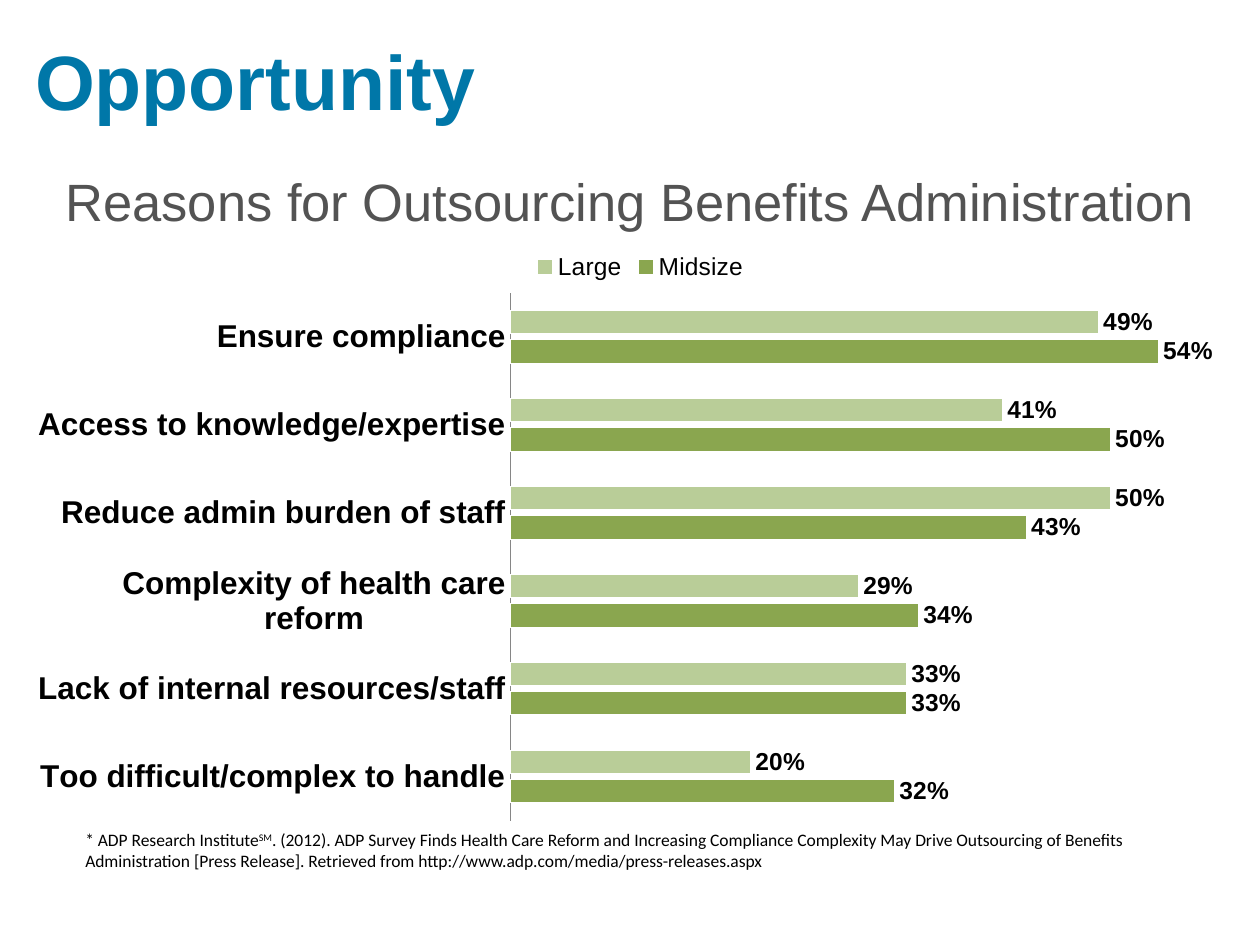
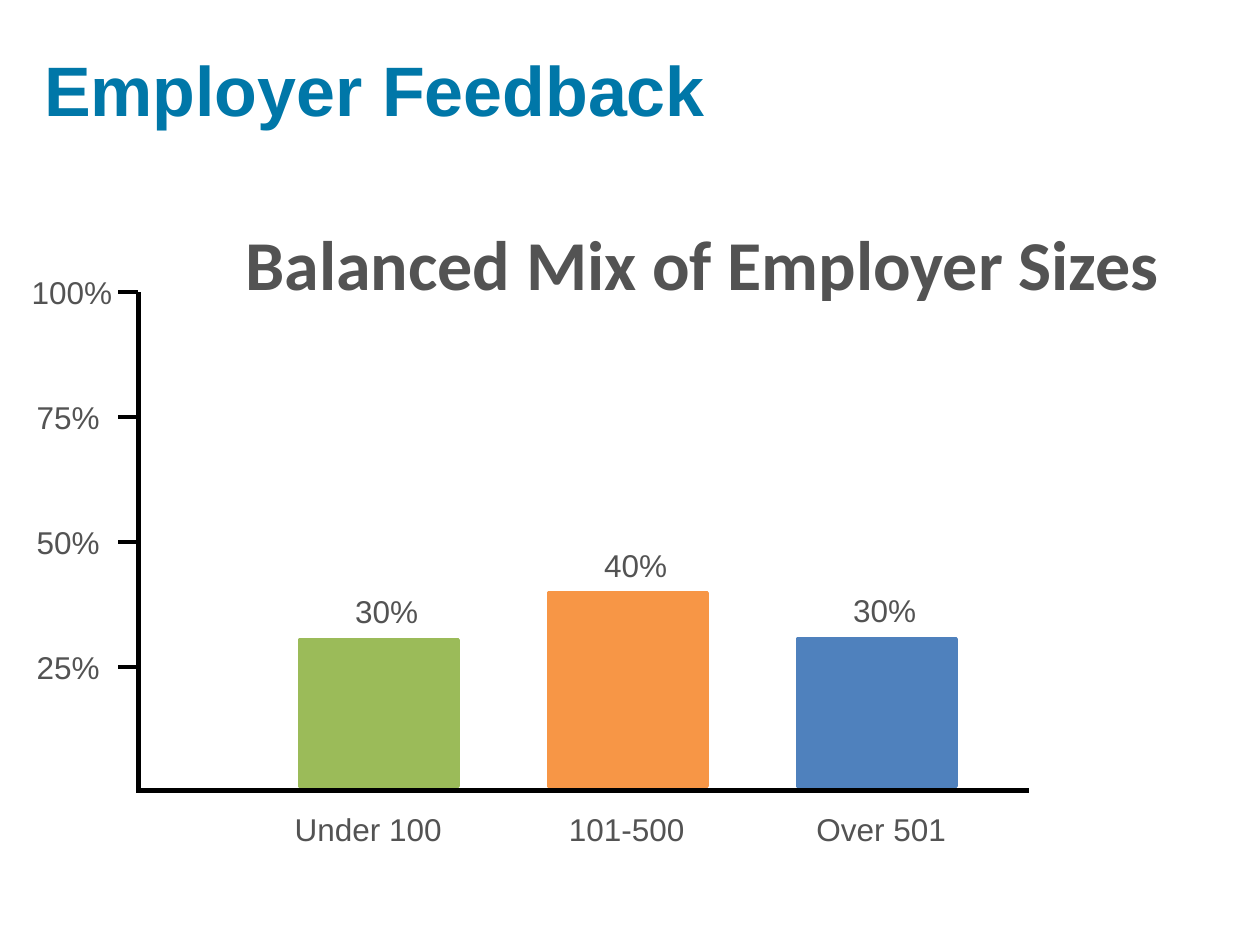
from lxml import etree
from pptx import Presentation
from pptx.chart.data import CategoryChartData
from pptx.dml.color import RGBColor
from pptx.enum.chart import (XL_CHART_TYPE, XL_LABEL_POSITION, XL_LEGEND_POSITION,
                             XL_TICK_LABEL_POSITION, XL_TICK_MARK)
from pptx.enum.shapes import MSO_CONNECTOR, MSO_SHAPE
from pptx.oxml.ns import qn
from pptx.util import Cm, Pt

BAR_CHART = XL_CHART_TYPE.BAR_CLUSTERED
OUTSIDE_END = XL_LABEL_POSITION.OUTSIDE_END
LEGEND_TOP = XL_LEGEND_POSITION.TOP
LABELS_NEXT_TO_AXIS = XL_TICK_LABEL_POSITION.NEXT_TO_AXIS
NO_TICK = XL_TICK_MARK.NONE
STRAIGHT = MSO_CONNECTOR.STRAIGHT
RECTANGLE = MSO_SHAPE.RECTANGLE

TITLE_BLUE = RGBColor(0x00, 0x77, 0xA8)
GREY = RGBColor(0x53, 0x53, 0x53)
AXIS_GREY = RGBColor(0x86, 0x86, 0x86)
BLACK = RGBColor(0x00, 0x00, 0x00)
WHITE = RGBColor(0xFF, 0xFF, 0xFF)
DARK_GREEN = RGBColor(0x8A, 0xA6, 0x4F)
PALE_GREEN = RGBColor(0xB9, 0xCD, 0x98)
GREEN = RGBColor(0x9B, 0xBB, 0x59)
ORANGE = RGBColor(0xF7, 0x96, 0x46)
BLUE = RGBColor(0x4F, 0x81, 0xBD)

REASONS = ["Too difficult/complex to handle", "Lack of internal resources/staff",
           "Complexity of health care reform", "Reduce admin burden of staff",
           "Access to knowledge/expertise", "Ensure compliance"]
REASON_SERIES = [
    ("Midsize", DARK_GREEN, [0.32, 0.33, 0.34, 0.43, 0.5, 0.54]),
    ("Large", PALE_GREEN, [0.2, 0.33, 0.29, 0.5, 0.41, 0.49]),
]
PLOT_LAYOUT = {"layoutTarget": "inner", "xMode": "edge", "yMode": "edge",
               "x": 0.395, "y": 0.207, "w": 0.581, "h": 0.751}
LEGEND_LAYOUT = {"xMode": "edge", "yMode": "edge",
                 "x": 0.41, "y": 0.15, "w": 0.18, "h": 0.04}
CITATION = [
    ("* ADP Research Institute", False),
    ("SM", True),
    (". (2012). ADP Survey Finds Health Care Reform and Increasing Compliance "
     "Complexity May Drive Outsourcing of Benefits Administration [Press Release]. "
     "Retrieved from http://www.adp.com/media/press-releases.aspx", False),
]
EMPLOYER_SIZES = [
    ("Under 100", "30%", 2.95, -0.1, GREEN),
    ("101-500", "40%", 3.89, 0.41, ORANGE),
    ("Over 501", "30%", 2.97, 0.38, BLUE),
]


def add_text(slide, box, text, size, color=GREY, font="Arial", bold=False, inset=True):
    """Add a one-paragraph text box and return its paragraph."""
    text_frame = slide.shapes.add_textbox(*map(Cm, box)).text_frame
    text_frame.word_wrap = True
    if not inset:
        text_frame.margin_left = text_frame.margin_right = 0
        text_frame.margin_top = text_frame.margin_bottom = 0
    paragraph = text_frame.paragraphs[0]
    paragraph.text = text
    paragraph.font.name = font
    paragraph.font.size = Pt(size)
    paragraph.font.bold = bold
    paragraph.font.color.rgb = color
    return paragraph


def add_title(slide, box, text, size):
    """Add the bold blue slide title."""
    add_text(slide, box, text, size, TITLE_BLUE, bold=True)


def add_line(slide, start, end, width):
    """Add a straight black line without shadow."""
    line = slide.shapes.add_connector(STRAIGHT, *map(Cm, start + end))
    line.line.color.rgb = BLACK
    line.line.width = Pt(width)
    etree.SubElement(line._element.spPr, qn("a:effectLst"))


def set_layout(element, position, values):
    """Fix the place of a chart part, with its layout as child number position."""
    layout = element.find(qn("c:layout"))
    if layout is None:
        layout = etree.Element(qn("c:layout"))
        element.insert(position, layout)
    manual = etree.SubElement(layout, qn("c:manualLayout"))
    for name, value in values.items():
        etree.SubElement(manual, qn(f"c:{name}")).set("val", str(value))


def add_reasons_chart(slide, box):
    """Add the clustered bar chart of outsourcing reasons."""
    data = CategoryChartData(number_format="0%")
    data.categories = REASONS
    for name, _, values in REASON_SERIES:
        data.add_series(name, values)
    chart = slide.shapes.add_chart(BAR_CHART, *map(Cm, box), data).chart
    chart.has_title = False
    chart.font.name = "Arial"
    chart.font.size = Pt(14)
    chart.font.color.rgb = BLACK
    chart.has_legend = True
    chart.legend.position = LEGEND_TOP
    chart.legend.include_in_layout = False
    chart_element = chart._chartSpace.chart
    set_layout(chart_element.plotArea, 0, PLOT_LAYOUT)
    set_layout(chart_element.find(qn("c:legend")), 1, LEGEND_LAYOUT)

    value_axis = chart.value_axis
    value_axis.minimum_scale, value_axis.maximum_scale = 0, 0.6
    value_axis.has_major_gridlines = False
    value_axis.visible = False
    category_axis = chart.category_axis
    category_axis.major_tick_mark = NO_TICK
    category_axis.tick_label_position = LABELS_NEXT_TO_AXIS
    category_axis.tick_labels.font.size = Pt(18)
    category_axis.tick_labels.font.bold = True
    category_axis.format.line.color.rgb = AXIS_GREY
    category_axis.format.line.width = Pt(1)

    plot = chart.plots[0]
    plot.gap_width, plot.overlap = 150, -25
    plot.vary_by_categories = False
    for series, (_, color, _) in zip(plot.series, REASON_SERIES):
        series.format.fill.solid()
        series.format.fill.fore_color.rgb = color
        series.format.line.color.rgb = WHITE
        labels = series.data_labels
        labels.show_value = True
        labels.number_format = "0%"
        labels.number_format_is_linked = False
        labels.position = OUTSIDE_END
        labels.font.size = Pt(14)
        labels.font.bold = True


def add_axes(slide, box):
    """Add the two axis lines with percentage ticks and labels."""
    left, top, width, height = box
    bottom = top + height
    add_line(slide, (left, top), (left, bottom + 0.05), 3)
    add_line(slide, (left - 0.03, bottom), (left + width, bottom), 3)
    for index, percent in enumerate((100, 75, 50, 25)):
        y = top + index * 2.52
        add_line(slide, (left, y), (left - 0.41, y), 2)
        label_left = left - (2.15 if percent == 100 else 2.05)
        add_text(slide, (label_left, y - 0.38, 1.68, 0.76), f"{percent}%", 18, inset=False)


def add_size_bars(slide, box):
    """Add one bar per employer size with its value and category."""
    left, top, _, height = box
    base = top + height - 0.08
    for index, (category, value, bar_height, shift, color) in enumerate(EMPLOYER_SIZES):
        bar_left = left + 3.25 + index * 5.02
        bar_top = base - bar_height
        bar = slide.shapes.add_shape(
            RECTANGLE, *map(Cm, (bar_left, bar_top, 3.2, bar_height)))
        bar.shadow.inherit = False
        bar.fill.solid()
        bar.fill.fore_color.rgb = color
        bar.line.color.rgb = color
        bar.line.width = Pt(2)
        add_text(slide, (bar_left + 1.12, bar_top - 0.96, 1.4, 0.76), value, 18, inset=False)
        add_text(slide, (bar_left + shift, base + 0.48, 3.3, 0.76), category, 18, inset=False)


def add_citation(slide, box):
    """Add the source citation with its superscript mark."""
    paragraph = add_text(slide, box, "", 10, BLACK, "Calibri")
    for text, raised in CITATION:
        run = paragraph.add_run()
        run.text = text
        if raised:
            run.font._element.set("baseline", "30000")


def build_opportunity(slide):
    """Build the slide on reasons for outsourcing."""
    add_citation(slide, (1.47, 16.59, 22.02, 1.12))
    add_reasons_chart(slide, (0.43, 2.97, 24.97, 14.17))
    add_text(slide, (1.07, 3.28, 23.7, 1.55),
             "Reasons for Outsourcing Benefits Administration", 30)
    add_title(slide, (0.46, 0.56, 21.84, 2.13), "Opportunity", 44)


def build_feedback(slide):
    """Build the slide on employer sizes."""
    graph_box = (2.79, 5.89, 17.96, 10.04)
    add_title(slide, (0.64, 0.81, 19.53, 1.96), "Employer Feedback", 40)
    heading = add_text(slide, (4.7, 4.65, 19.15, 1.93),
                       "Balanced Mix of Employer Sizes", 40, font="Calibri", bold=True)
    heading.line_spacing = 0.8
    add_size_bars(slide, graph_box)
    add_axes(slide, graph_box)


def main():
    """Build and save the presentation."""
    presentation = Presentation()
    presentation.slide_width, presentation.slide_height = Cm(25.4), Cm(19.05)
    for build in (build_opportunity, build_feedback):
        build(presentation.slides.add_slide(presentation.slide_layouts[6]))
    presentation.save("out.pptx")


if __name__ == "__main__":
    main()
